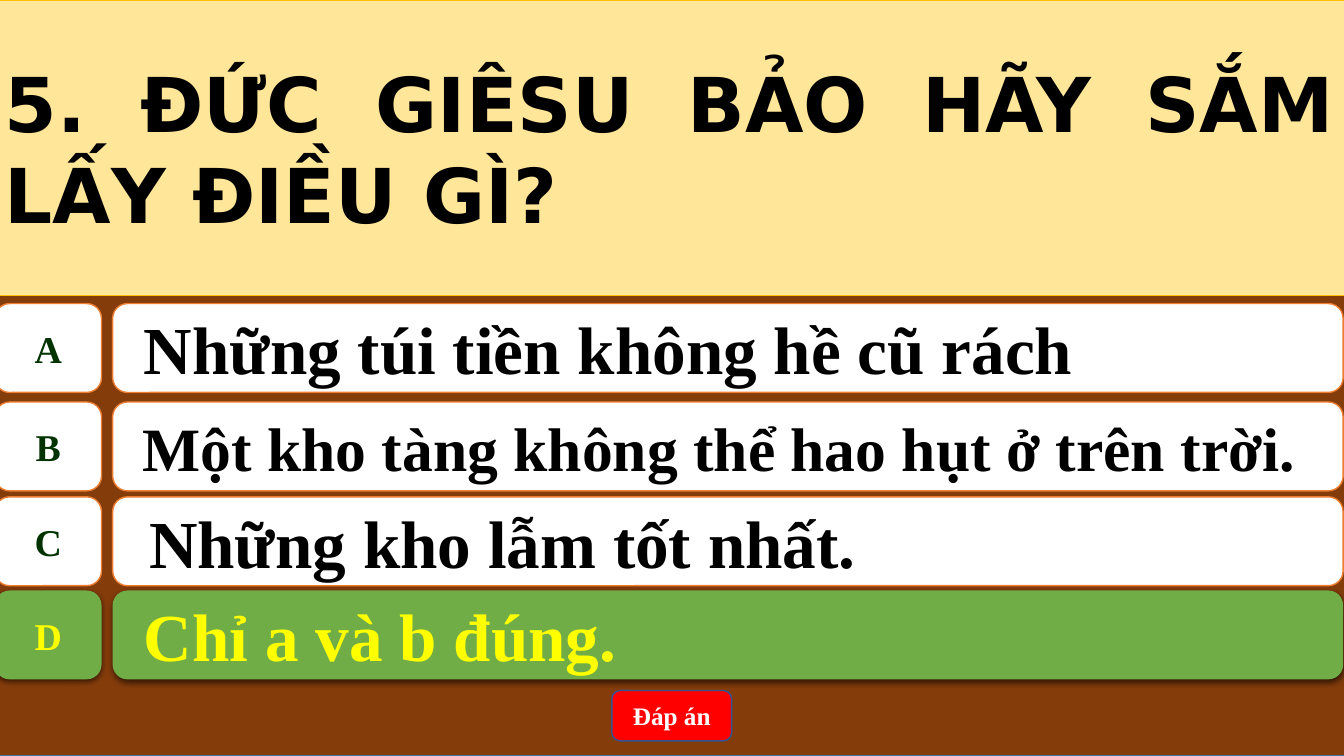
from dataclasses import dataclass

from lxml import etree
from pptx import Presentation
from pptx.dml.color import RGBColor
from pptx.enum.shapes import MSO_SHAPE
from pptx.enum.text import MSO_ANCHOR, MSO_AUTO_SIZE, PP_ALIGN
from pptx.oxml.ns import qn
from pptx.util import Cm, Pt

RECT = MSO_SHAPE.RECTANGLE
ROUNDED = MSO_SHAPE.ROUNDED_RECTANGLE
TAB = MSO_SHAPE.FLOWCHART_ALTERNATE_PROCESS
MIDDLE = MSO_ANCHOR.MIDDLE
NO_FIT = MSO_AUTO_SIZE.NONE
LEFT, CENTER, JUSTIFY = PP_ALIGN.LEFT, PP_ALIGN.CENTER, PP_ALIGN.JUSTIFY
TITLE_ONLY = 5


@dataclass(frozen=True)
class Theme:
    body_font: str = "Times New Roman"
    title_font: str = "DejaVu Sans"
    brown: str = "843C0B"
    frame: str = "43739E"
    cream: str = "FFE699"
    gold: str = "FFC000"
    white: str = "FFFFFF"
    black: str = "000000"
    orange: str = "ED7D31"
    letter: str = "003300"
    green: str = "70AD47"
    yellow: str = "FFFF00"
    red: str = "FF0000"
    navy: str = "325491"
    title_size: float = 54
    answer_size: float = 48
    long_answer_size: float = 44
    letter_size: float = 27
    button_size: float = 18


@dataclass(frozen=True)
class Answer:
    letter: str
    text: str
    top: float
    inset: float
    size: float
    correct: bool = False


T = Theme()
ANSWERS = [
    Answer("A", "Những túi tiền không hề cũ rách", 7.65, 0.68, T.answer_size),
    Answer("B", "Một kho tàng không thể hao hụt ở trên trời.", 10.13, 0.64, T.long_answer_size),
    Answer("C", "Những kho lẫm tốt nhất.", 12.52, 0.81, T.answer_size),
    Answer("D", "Chỉ a và b đúng.", 14.88, 0.68, T.answer_size, correct=True),
]
EDGE, FULL_WIDTH = -0.13, 34.01
ROW_HEIGHT = 2.24


def paint(sp, fill: str, line: str | None = None, width: float = 1) -> None:
    sp.fill.solid()
    sp.fill.fore_color.rgb = RGBColor.from_string(fill)
    if line:
        sp.line.color.rgb = RGBColor.from_string(line)
        sp.line.width = Pt(width)
    else:
        sp.line.fill.background()


def add_box(shapes, kind, left: float, top: float, width: float, height: float,
            fill: str, line: str | None = None):
    sp = shapes.add_shape(kind, Cm(left), Cm(top), Cm(width), Cm(height))
    sp.shadow.inherit = False
    paint(sp, fill, line)
    return sp


def write(sp, text: str, *, size: float, color: str, font: str = T.body_font,
          align=CENTER, inset: float = 0.25, wrap: bool = True) -> None:
    tf = sp.text_frame
    tf.auto_size = NO_FIT
    tf.word_wrap = wrap
    tf.vertical_anchor = MIDDLE
    tf.margin_left = Cm(inset)
    p = tf.paragraphs[0]
    p.alignment = align
    r = p.add_run()
    r.text = text
    r.font.name = font
    r.font.size = Pt(size)
    r.font.bold = True
    r.font.color.rgb = RGBColor.from_string(color)


def add_shadow(sp) -> None:
    effects = sp._element.spPr.find(qn("a:effectLst"))
    shadow = etree.SubElement(effects, qn("a:outerShdw"), blurRad=str(Pt(4.5)),
                              dist=str(Pt(1.5)), dir="5400000", rotWithShape="0")
    color = etree.SubElement(shadow, qn("a:srgbClr"), val=T.black)
    etree.SubElement(color, qn("a:alpha"), val="63000")


def add_answer(slide, answer: Answer) -> None:
    fill, line = (T.green, None) if answer.correct else (T.white, T.orange)
    shapes = slide.shapes.add_group_shape().shapes
    bar = add_box(shapes, ROUNDED, 2.84, answer.top, 31.01, ROW_HEIGHT, fill, line)
    tab = add_box(shapes, TAB, EDGE, answer.top, 2.69, ROW_HEIGHT, fill, line)
    write(bar, answer.text, size=answer.size, align=LEFT, inset=answer.inset,
          color=T.yellow if answer.correct else T.black)
    write(tab, answer.letter, size=T.letter_size, wrap=False,
          color=T.yellow if answer.correct else T.letter)
    if answer.correct:
        add_shadow(bar)
        add_shadow(tab)


def add_question(slide, text: str) -> None:
    sp = slide.shapes.title
    sp.left, sp.top, sp.width, sp.height = Cm(EDGE), Cm(0), Cm(FULL_WIDTH), Cm(7.44)
    paint(sp, T.cream, T.gold, 0.5)
    write(sp, text, size=T.title_size, color=T.black, font=T.title_font, align=JUSTIFY)
    # Bring the question in front of the backdrop
    slide.shapes._spTree.append(sp._element)


def main() -> None:
    prs = Presentation()
    prs.slide_width, prs.slide_height = Cm(33.87), Cm(19.05)
    slide = prs.slides.add_slide(prs.slide_layouts[TITLE_ONLY])

    # Backdrop and question
    add_box(slide.shapes, RECT, EDGE, 0, FULL_WIDTH, 19.05, T.brown, T.frame)
    add_question(slide, "5. ĐỨC GIÊSU BẢO HÃY SẮM LẤY ĐIỀU GÌ?")

    # Answers
    for answer in ANSWERS:
        add_answer(slide, answer)

    # Answer button
    button = add_box(slide.shapes, ROUNDED, 15.42, 17.4, 3.02, 1.27, T.red, T.navy)
    write(button, "Đáp án", size=T.button_size, color=T.white)

    prs.save("out.pptx")


if __name__ == "__main__":
    main()
